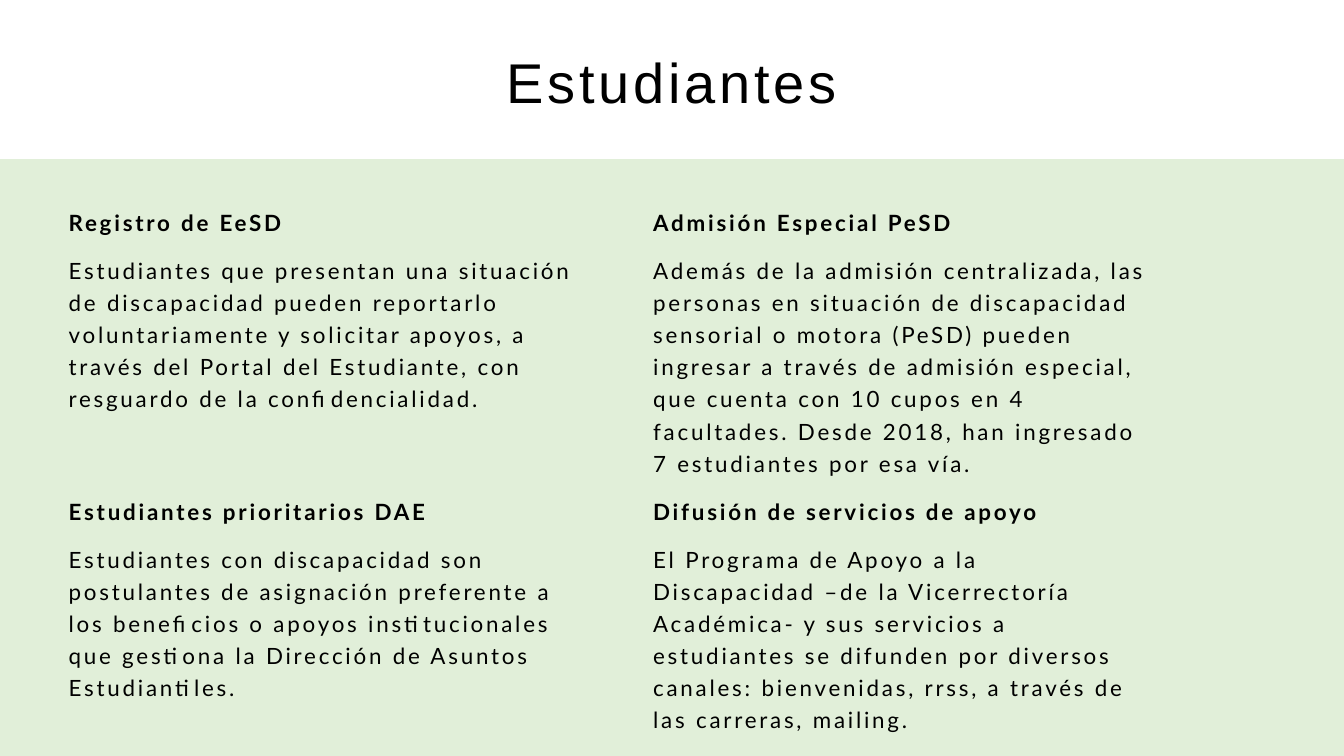
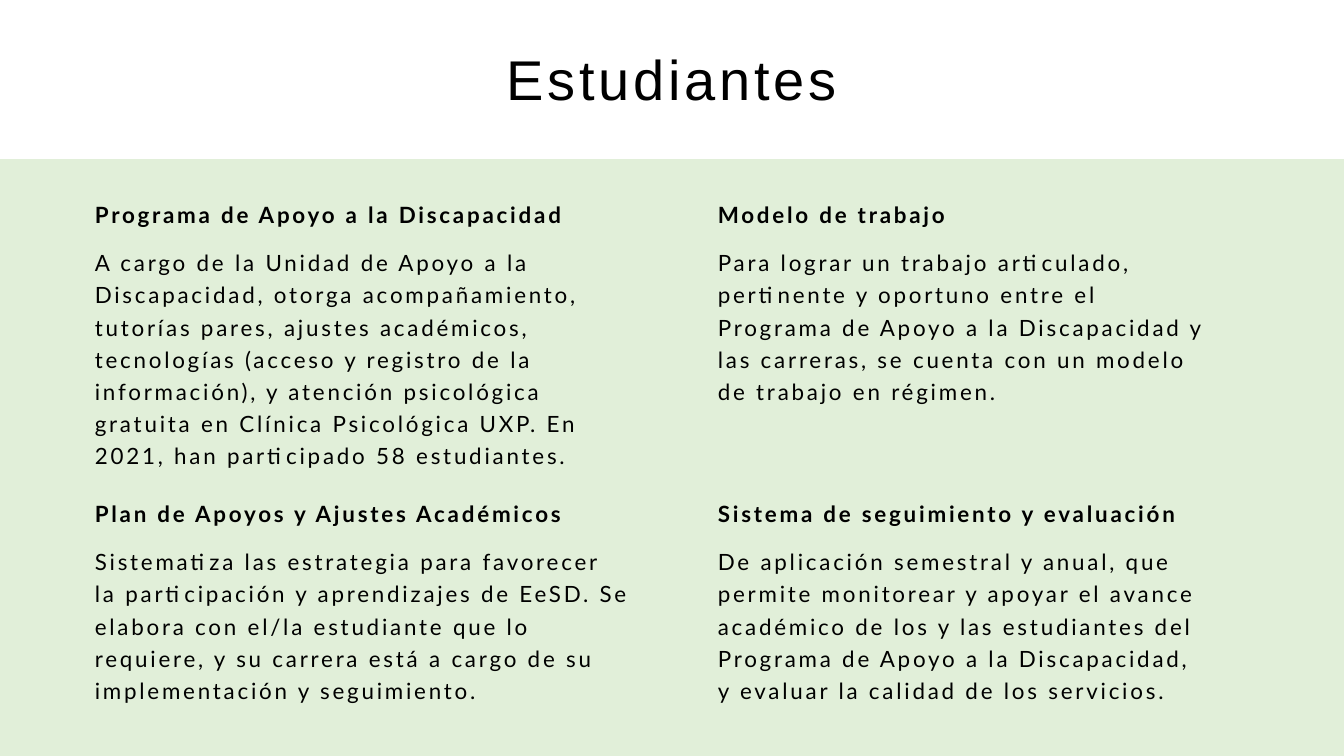
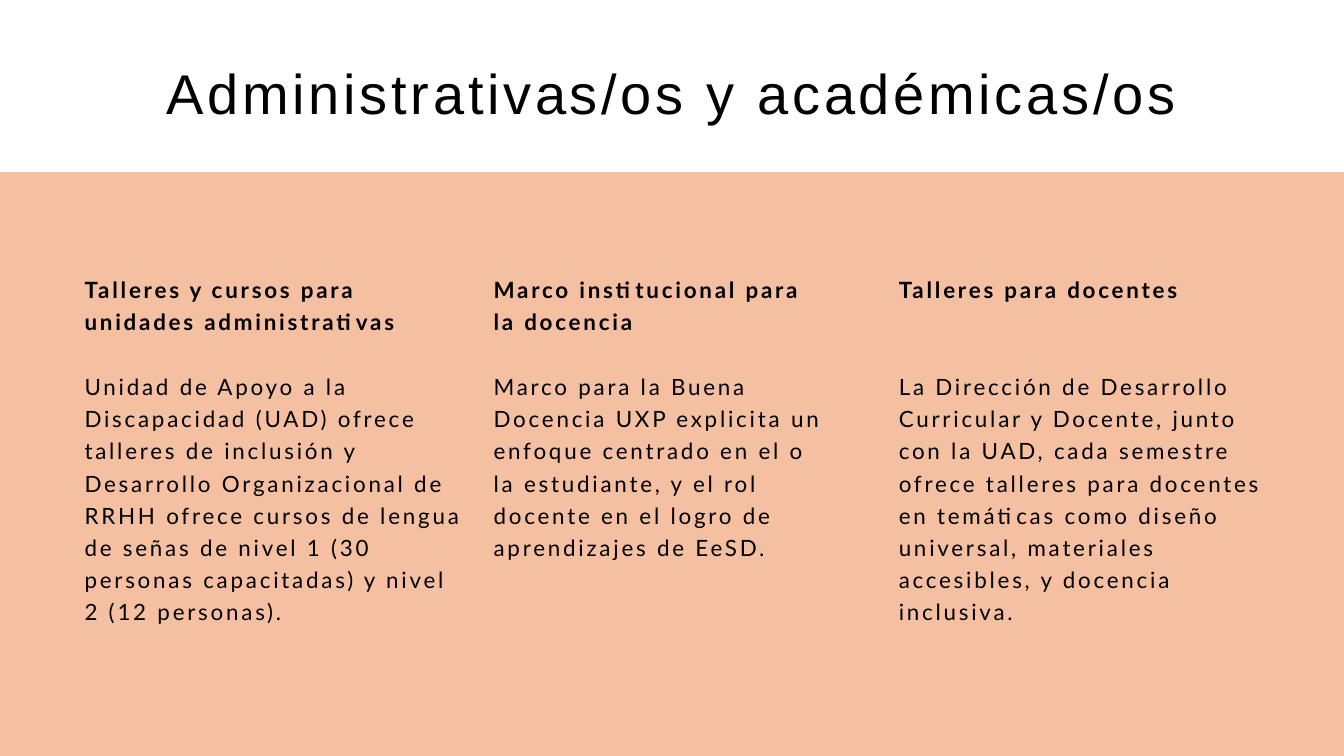
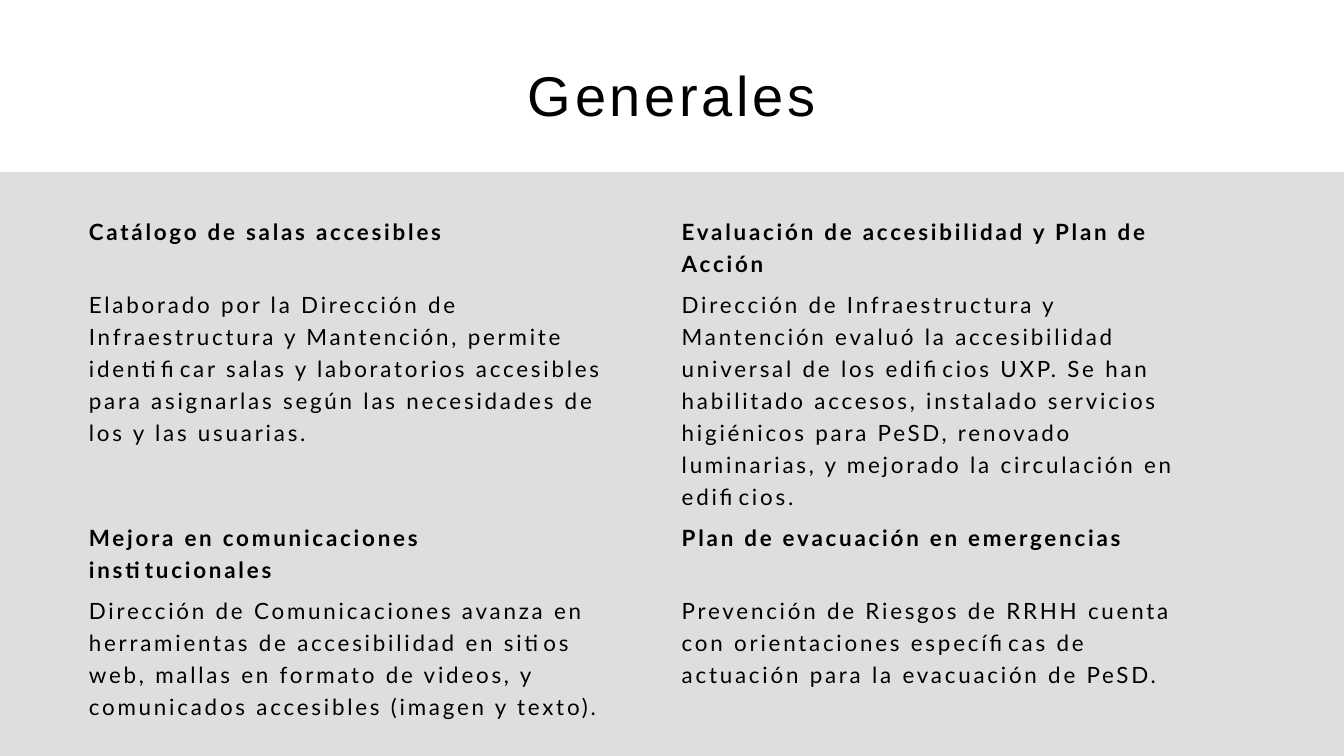
from lxml import etree
from pptx import Presentation
from pptx.dml.color import RGBColor
from pptx.enum.shapes import MSO_SHAPE
from pptx.enum.text import MSO_AUTO_SIZE, PP_ALIGN
from pptx.oxml.ns import qn
from pptx.util import Cm, Pt

RECTANGLE = MSO_SHAPE.RECTANGLE
CENTER = PP_ALIGN.CENTER
FIT_SHAPE = MSO_AUTO_SIZE.SHAPE_TO_FIT_TEXT

SLIDE_WIDTH, SLIDE_HEIGHT = 33.87, 19.05
COLORS = {"text": "000000", "background": "FFFFFF",
          "green": "C5E0B4", "orange": "F2A57A", "gray": "BFBFBF"}
TITLE_FONT = {"name": "Arial", "size": Pt(40)}
HEADING_FONT = {"name": "Lato", "size": Pt(16), "bold": True}
BODY_FONT = {**HEADING_FONT, "bold": False}
PLAIN_TABLE_STYLE = "{2D5ABB26-0587-4C30-8999-92F81FD0307C}"


class Deck:
    """Holds the presentation, its shared style and the current slide."""

    def __init__(self):
        self.presentation = Presentation()
        self.presentation.slide_width = Cm(SLIDE_WIDTH)
        self.presentation.slide_height = Cm(SLIDE_HEIGHT)
        self.slide = None

    def add_slide(self):
        self.slide = self.presentation.slides.add_slide(self.presentation.slide_layouts[6])
        fill = self.slide.background.fill
        fill.solid()
        fill.fore_color.rgb = RGBColor.from_string(COLORS["background"])

    def add_text(self, paragraph, text, font, spacing):
        """Add one run; spacing between letters is in points."""
        run = paragraph.add_run()
        run.text = text
        for name, value in font.items():
            setattr(run.font, name, value)
        run.font.color.rgb = RGBColor.from_string(COLORS["text"])
        run._r.get_or_add_rPr().set("spc", str(round(spacing * 100)))

    def band(self, top, color, opacity):
        """Fill the slide from top down with a see-through colour (opacity in percent)."""
        shape = self.slide.shapes.add_shape(
            RECTANGLE, 0, Cm(top), Cm(SLIDE_WIDTH), Cm(SLIDE_HEIGHT - top))
        shape.shadow.inherit = False
        shape.line.fill.background()
        shape.fill.solid()
        shape.fill.fore_color.rgb = RGBColor.from_string(COLORS[color])
        color_element = shape._element.spPr.find(".//" + qn("a:srgbClr"))
        etree.SubElement(color_element, qn("a:alpha")).set("val", str(opacity * 1000))

    def title(self, text, top, width=12.17):
        box = self.slide.shapes.add_textbox(
            Cm((SLIDE_WIDTH - width) / 2), Cm(top), Cm(width), Cm(1.96))
        frame = box.text_frame
        frame.word_wrap = True
        frame.auto_size = FIT_SHAPE
        paragraph = frame.paragraphs[0]
        paragraph.alignment = CENTER
        self.add_text(paragraph, text, TITLE_FONT, 2.7)

    def text_table(self, left, top, widths, heights, margin_left, margin_y, margins_right, texts):
        """Add a plain table whose rows alternate headings and body text."""
        table = self.slide.shapes.add_table(
            len(heights), len(widths), Cm(left), Cm(top),
            Cm(sum(widths)), Cm(sum(heights))).table
        table.first_row = table.horz_banding = False
        table._tbl.tblPr.find(qn("a:tableStyleId")).text = PLAIN_TABLE_STYLE
        for column, width in zip(table.columns, widths):
            column.width = Cm(width)
        for row_number, (row, height) in enumerate(zip(table.rows, heights)):
            row.height = Cm(height)
            font = BODY_FONT if row_number % 2 else HEADING_FONT
            for cell, text, margin_right in zip(row.cells, texts[row_number], margins_right):
                margins = {"margin_left": margin_left, "margin_right": margin_right,
                           "margin_top": margin_y, "margin_bottom": margin_y}
                for name, value in margins.items():
                    setattr(cell, name, Cm(value))
                cell.fill.background()
                paragraph = cell.text_frame.paragraphs[0]
                paragraph.line_spacing = 1.2
                self.add_text(paragraph, text, font, 2)


SLIDES = [
    {
        "band": {"top": 4.01, "color": "green", "opacity": 50},
        "table": {
            "left": 0.94, "top": 4.95,
            "widths": [14.73, 14.05], "heights": [1.2, 6.05, 1.2, 5.24],
            "margin_left": 0.79, "margin_y": 0.2, "margins_right": [0.79, 0.79],
            "texts": [
                ["Registro de EeSD", "Admisión Especial PeSD"],
                ["Estudiantes que presentan una situación de discapacidad pueden reportarlo "
                 "voluntariamente y solicitar apoyos, a través del Portal del Estudiante, con "
                 "resguardo de la confidencialidad.",
                 "Además de la admisión centralizada, las personas en situación de discapacidad "
                 "sensorial o motora (PeSD) pueden ingresar a través de admisión especial, que "
                 "cuenta con 10 cupos en 4 facultades. Desde 2018, han ingresado 7 estudiantes "
                 "por esa vía."],
                ["Estudiantes prioritarios DAE", "Difusión de servicios de apoyo"],
                ["Estudiantes con discapacidad son postulantes de asignación preferente a los "
                 "beneficios o apoyos institucionales que gestiona la Dirección de Asuntos "
                 "Estudiantiles.",
                 "El Programa de Apoyo a la Discapacidad –de la Vicerrectoría Académica- y sus "
                 "servicios a estudiantes se difunden por diversos canales: bienvenidas, rrss, "
                 "a través de las carreras, mailing."],
            ],
        },
        "title": {"text": "Estudiantes", "top": 1.07},
    },
    {
        "band": {"top": 4.01, "color": "green", "opacity": 50},
        "table": {
            "left": 1.5, "top": 4.75,
            "widths": [15.7, 14.48], "heights": [1.2, 6.32, 1.2, 4.44],
            "margin_left": 0.89, "margin_y": 0.2, "margins_right": [1.3, 1.3],
            "texts": [
                ["Programa de Apoyo a la Discapacidad", "Modelo de trabajo"],
                ["A cargo de la Unidad de Apoyo a la Discapacidad, otorga acompañamiento, "
                 "tutorías pares, ajustes académicos, tecnologías (acceso y registro de la "
                 "información), y atención psicológica gratuita en Clínica Psicológica UXP. "
                 "En 2021, han participado 58 estudiantes.",
                 "Para lograr un trabajo articulado, pertinente y oportuno entre el Programa de "
                 "Apoyo a la Discapacidad y las carreras, se cuenta con un modelo de trabajo en "
                 "régimen."],
                ["Plan de Apoyos y Ajustes Académicos", "Sistema de seguimiento y evaluación"],
                ["Sistematiza las estrategia para favorecer la participación y aprendizajes de "
                 "EeSD. Se elabora con el/la estudiante que lo requiere, y su carrera está a "
                 "cargo de su implementación y seguimiento.",
                 "De aplicación semestral y anual, que permite monitorear y apoyar el avance "
                 "académico de los y las estudiantes del Programa de Apoyo a la Discapacidad, y "
                 "evaluar la calidad de los servicios."],
            ],
        },
        "title": {"text": "Estudiantes", "top": 0.99},
    },
    {
        "band": {"top": 4.34, "color": "orange", "opacity": 70},
        "table": {
            "left": 1.52, "top": 6.43,
            "widths": [10.31, 10.21, 9.8], "heights": [2.42, 7.25],
            "margin_left": 0.61, "margin_y": 0.41, "margins_right": [0, 1.3, 0],
            "texts": [
                ["Talleres y cursos para unidades administrativas",
                 "Marco institucional para la docencia",
                 "Talleres para docentes"],
                ["Unidad de Apoyo a la Discapacidad (UAD) ofrece talleres de inclusión y "
                 "Desarrollo Organizacional de RRHH ofrece cursos de lengua de señas de nivel 1 "
                 "(30 personas capacitadas) y nivel 2 (12 personas).",
                 "Marco para la Buena Docencia UXP explicita un enfoque centrado en el o la "
                 "estudiante, y el rol docente en el logro de aprendizajes de EeSD.",
                 "La Dirección de Desarrollo Curricular y Docente, junto con la UAD, cada "
                 "semestre ofrece talleres para docentes en temáticas como diseño universal, "
                 "materiales accesibles, y docencia inclusiva."],
            ],
        },
        "title": {"text": "Administrativas/os y académicas/os", "top": 1.35, "width": 28.19},
    },
    {
        "band": {"top": 4.34, "color": "gray", "opacity": 50},
        "table": {
            "left": 1.35, "top": 5.28,
            "widths": [14.94, 14.99], "heights": [1.82, 5.85, 1.82, 3.43],
            "margin_left": 0.89, "margin_y": 0.1, "margins_right": [0.89, 0.89],
            "texts": [
                ["Catálogo de salas accesibles", "Evaluación de accesibilidad y Plan de Acción"],
                ["Elaborado por la Dirección de Infraestructura y Mantención, permite "
                 "identificar salas y laboratorios accesibles para asignarlas según las "
                 "necesidades de los y las usuarias.",
                 "Dirección de Infraestructura y Mantención evaluó la accesibilidad universal "
                 "de los edificios UXP. Se han habilitado accesos, instalado servicios "
                 "higiénicos para PeSD, renovado luminarias, y mejorado la circulación en "
                 "edificios."],
                ["Mejora en comunicaciones institucionales", "Plan de evacuación en emergencias"],
                ["Dirección de Comunicaciones avanza en herramientas de accesibilidad en sitios "
                 "web, mallas en formato de videos, y comunicados accesibles (imagen y texto).",
                 "Prevención de Riesgos de RRHH cuenta con orientaciones específicas de "
                 "actuación para la evacuación de PeSD."],
            ],
        },
        "title": {"text": "Generales", "top": 1.4},
    },
]


def main():
    deck = Deck()
    for content in SLIDES:
        deck.add_slide()
        deck.band(**content["band"])
        deck.text_table(**content["table"])
        deck.title(**content["title"])
    deck.presentation.save("out.pptx")


if __name__ == "__main__":
    main()
